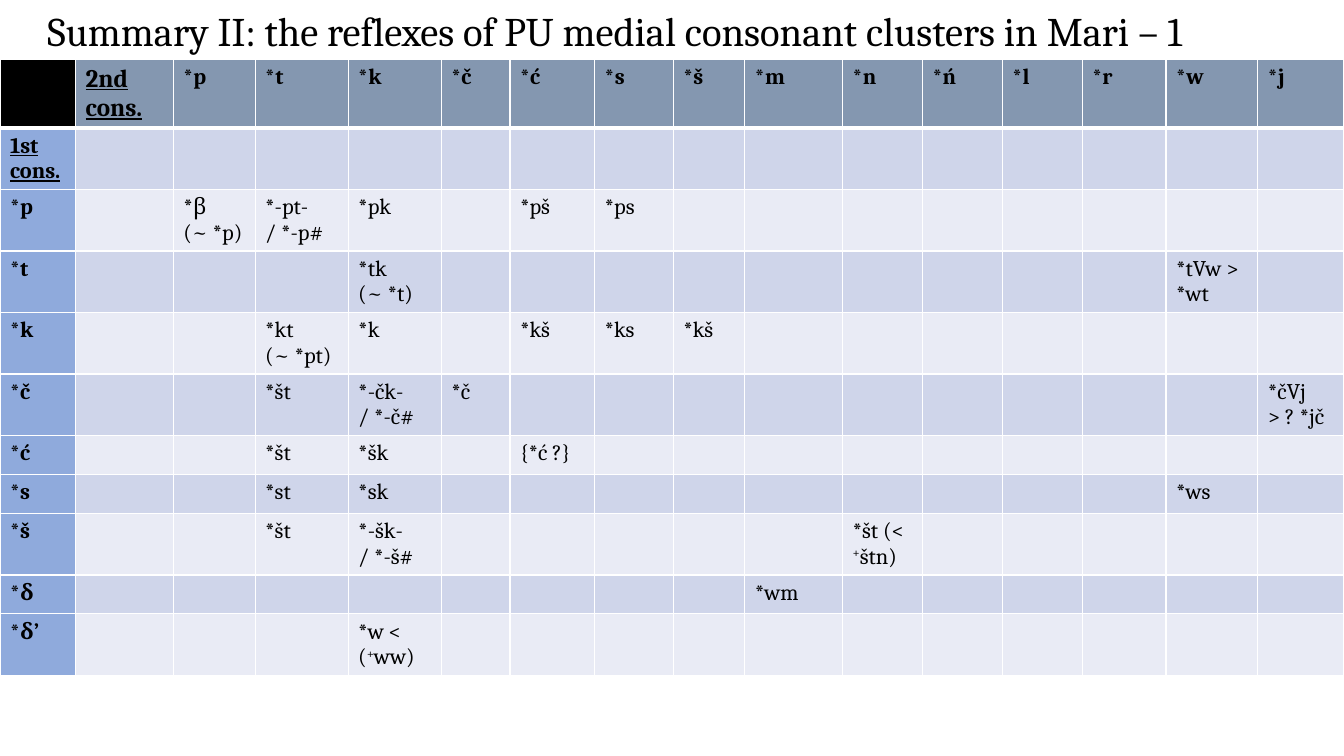
from dataclasses import dataclass

from lxml.etree import SubElement as Sub
from pptx import Presentation
from pptx.dml.color import RGBColor as RGB
from pptx.enum.text import MSO_ANCHOR as Anchor, MSO_AUTO_SIZE as Fit, PP_ALIGN as Align
from pptx.oxml.ns import qn
from pptx.util import Cm, Pt


@dataclass(frozen=True)
class Theme:
    font: str = "Cambria"
    ink: str = "000000"
    line: str = "FFFFFF"
    corner: str = "000000"
    head: str = "8497B0"
    side: str = "8FAADC"
    bands: tuple = ("CFD5EA", "E9EBF5")
    title: int = 29
    label: int = 18
    body: int = 16


LOOK = Theme()

TITLE = "Summary II: the reflexes of PU medial consonant clusters in Mari – 1"
SECOND = "*p *t *k *č *ć *s *š *m *n *ń *l *r *w *j".split()
# First consonant -> reflexes by second consonant; + is set as a superscript
FIRST = {
    "1st cons.": {},
    "*p": {"*p": "*β\n(~ *p)", "*t": "*-pt-\n/ *-p#", "*k": "*pk",
           "*ć": "*pš", "*s": "*ps"},
    "*t": {"*k": "*tk\n(~ *t)", "*w": "*tVw > *wt"},
    "*k": {"*t": "*kt\n(~ *pt)", "*k": "*k", "*ć": "*kš", "*s": "*ks", "*š": "*kš"},
    "*č": {"*t": "*št", "*k": "*-čk-\n/ *-č#", "*č": "*č", "*j": "*čVj > ? *jč"},
    "*ć": {"*t": "*št", "*k": "*šk", "*ć": "{*ć ?}"},
    "*s": {"*t": "*st", "*k": "*sk", "*w": "*ws"},
    "*š": {"*t": "*št", "*k": "*-šk-\n/ *-š#", "*n": "*št (< +štn)"},
    "*δ": {"*m": "*wm"},
    "*δ’": {"*k": "*w < (+ww)"},
}
WIDTHS = (1.9, 2.46, 2.06, 2.34, 2.34, 1.73, 2.13, 1.98,
          1.8, 2.46, 2.01, 2.01, 2.01, 2.11, 2.31, 2.16)
ROW = 0.98


def write(frame, text, size=LOOK.body, bold=False, under=False, gap=0):
    """Fill a text frame, one paragraph per line."""
    for i, line in enumerate(text.split("\n")):
        para = frame.add_paragraph() if i else frame.paragraphs[0]
        para.alignment = Align.LEFT
        para.space_before = para.space_after = Pt(gap)
        for part in line.partition("+"):
            if not part:
                continue
            run = para.add_run()
            run.text = part
            font = run.font
            font.name, font.size = LOOK.font, Pt(size)
            font.bold, font.underline = bold, under
            font.color.rgb = RGB.from_string(LOOK.ink)
            if part == "+":
                run._r.get_or_add_rPr().set("baseline", "30000")
        if not line:
            end = Sub(para._p, qn("a:endParaRPr"), sz=str(size * 100))
            Sub(end, qn("a:latin"), typeface=LOOK.font)


def paint(cell, color, top=1, base=1):
    """Give a cell its borders and fill."""
    props = cell._tc.get_or_add_tcPr()
    for side, width in (("L", 1), ("R", 1), ("T", top), ("B", base)):
        edge = Sub(props, qn(f"a:ln{side}"), w=str(Pt(width)))
        fill = Sub(edge, qn("a:solidFill"))
        Sub(fill, qn("a:srgbClr"), val=LOOK.line)
    cell.fill.solid()
    cell.fill.fore_color.rgb = RGB.from_string(color)


def heading(slide, left, top, width, height):
    title = slide.shapes.title
    title.left, title.top = Cm(left), Cm(top)
    title.width, title.height = Cm(width), Cm(height)
    frame = title.text_frame
    frame.word_wrap, frame.auto_size = True, Fit.NONE
    frame.vertical_anchor = Anchor.MIDDLE
    write(frame, TITLE, size=LOOK.title, gap=5)


def matrix(slide, left, top, width):
    count = len(FIRST) + 1
    table = slide.shapes.add_table(count, len(WIDTHS), Cm(left), Cm(top),
                                   Cm(width), Cm(ROW * count)).table
    for col, size in zip(table.columns, WIDTHS):
        col.width = Cm(size * width / sum(WIDTHS))
    for row in table.rows:
        row.height = Cm(ROW)

    # Header row: second consonants
    for c, text in enumerate(["", "2nd cons.", *SECOND]):
        cell = table.cell(0, c)
        paint(cell, LOOK.head if c else LOOK.corner, base=3)
        key = c == 1
        write(cell.text_frame, text, bold=True, under=key,
              size=LOOK.label if key else LOOK.body)

    # Body rows: first consonant, then its reflexes
    for r, (first, found) in enumerate(FIRST.items(), 1):
        texts = [first, "", *(found.get(cons, "") for cons in SECOND)]
        for c, text in enumerate(texts):
            cell = table.cell(r, c)
            paint(cell, LOOK.bands[(r - 1) % 2] if c else LOOK.side,
                  top=3 if r == 1 else 1)
            write(cell.text_frame, text, bold=c == 0, under=c == 0 and r == 1)


def main():
    deck = Presentation()
    deck.slide_width, deck.slide_height = Cm(33.87), Cm(19.05)
    slide = deck.slides.add_slide(deck.slide_layouts[5])
    heading(slide, 0.94, 0.03, 32.92, 1.45)
    matrix(slide, 0, 1.5, 33.87)
    deck.save("out.pptx")


if __name__ == "__main__":
    main()
